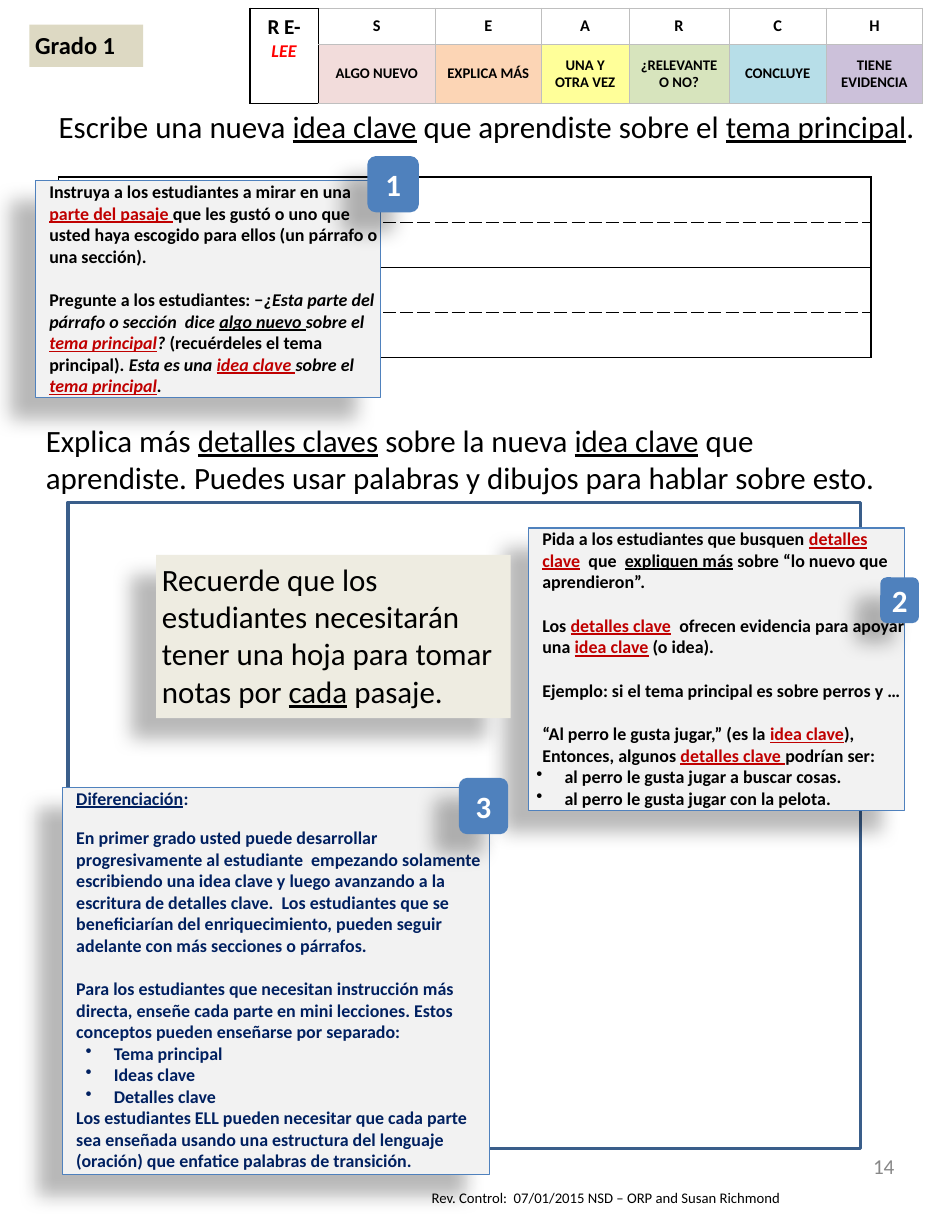
from dataclasses import dataclass
from itertools import groupby

from lxml import etree
from pptx import Presentation
from pptx.dml.color import RGBColor
from pptx.enum.shapes import MSO_SHAPE as Preset
from pptx.enum.text import MSO_ANCHOR as Anchor, PP_ALIGN as Align
from pptx.oxml.ns import qn
from pptx.util import Inches, Pt

BLACK = RGBColor(0x00, 0x00, 0x00)
WHITE = RGBColor(0xFF, 0xFF, 0xFF)
RED = RGBColor(0xFF, 0x00, 0x00)
KEYWORD = RGBColor(0xC0, 0x00, 0x00)
NAVY = RGBColor(0x00, 0x20, 0x60)
BLUE = RGBColor(0x4F, 0x81, 0xBD)
FRAME = RGBColor(0x3A, 0x5E, 0x8A)
NOTE = RGBColor(0xF2, 0xF2, 0xF2)
TAN = RGBColor(0xDD, 0xD9, 0xC3)
CREAM = RGBColor(0xEE, 0xEC, 0xE1)
GRAY = RGBColor(0x88, 0x88, 0x88)
GRID = RGBColor(0xBF, 0xBF, 0xBF)
PINK = RGBColor(0xF2, 0xDC, 0xDB)
ORANGE = RGBColor(0xFC, 0xD5, 0xB5)
YELLOW = RGBColor(0xFF, 0xFF, 0x99)
GREEN = RGBColor(0xD7, 0xE4, 0xBD)
AQUA = RGBColor(0xB7, 0xDE, 0xE8)
PURPLE = RGBColor(0xCC, 0xC1, 0xDA)

# Inline marks: _underlined_, *underlined keyword*, ~italic~
MARKS = "_*~"


@dataclass
class Para:
    text: str
    before: float = 0
    indent: float = 0
    bullet: bool = False


@dataclass
class Sheet:
    slide: object
    font: str = "Calibri"

    def settle(self, holder, anchor=Anchor.TOP, inset=(0.05, 0.05)):
        holder.vertical_anchor = anchor
        holder.margin_left = holder.margin_right = Inches(inset[0])
        holder.margin_top = holder.margin_bottom = Inches(inset[1])

    def fill_text(self, frame, paras, size, color=BLACK, bold=False, align=Align.LEFT,
                  anchor=Anchor.TOP, inset=(0.05, 0.05), wrap=True):
        frame.word_wrap = wrap
        self.settle(frame, anchor, inset)
        for index, para in enumerate(paras):
            p = frame.add_paragraph() if index else frame.paragraphs[0]
            self.paragraph(p, para, size, color, bold, align)

    def paragraph(self, p, para, size, color, bold=False, align=Align.LEFT):
        p.alignment = align
        p.space_before = Pt(para.before)
        p.font.name, p.font.size, p.font.bold = self.font, Pt(size), bold
        p.font.color.rgb = color
        props = p._p.get_or_add_pPr()
        props.set("marL", str(Inches(para.indent)))
        if para.bullet:
            props.set("indent", str(Inches(-0.24)))
            mark = etree.Element(qn("a:buChar"), char="•")
            props.find(qn("a:defRPr")).addprevious(mark)
        active = set()
        for is_mark, chars in groupby(para.text, lambda char: char in MARKS):
            if is_mark:
                active ^= set(chars)
                continue
            run = p.add_run()
            run.text = "".join(chars)
            if active & {"_", "*"}:
                run.font.underline = True
            if "*" in active:
                run.font.color.rgb = KEYWORD
            if "~" in active:
                run.font.italic = True

    def text(self, box, text, size, parent=None, **style):
        shapes = (parent or self.slide).shapes
        frame = shapes.add_textbox(*map(Inches, box)).text_frame
        self.fill_text(frame, [Para(text)], size, **style)

    def shape(self, box, fill=None, line=None, width=0.75, shadow=False,
              preset=Preset.RECTANGLE, parent=None):
        shape = (parent or self.slide).shapes.add_shape(preset, *map(Inches, box))
        if fill is None:
            shape.fill.background()
        else:
            shape.fill.solid()
            shape.fill.fore_color.rgb = fill
        if line is None:
            shape.line.fill.background()
        else:
            shape.line.color.rgb = line
            shape.line.width = Pt(width)
        shape.shadow.inherit = False
        if shadow:
            effects = shape._element.spPr.find(qn("a:effectLst"))
            outer = etree.SubElement(effects, qn("a:outerShdw"), blurRad=str(Pt(12)),
                                     dist=str(Pt(19.7)), dir=str(141 * 60000),
                                     algn="ctr", rotWithShape="0")
            tint = etree.SubElement(outer, qn("a:srgbClr"), val=str(BLACK))
            etree.SubElement(tint, qn("a:alpha"), val="28000")
        return shape

    def note(self, box, paras, color=BLACK):
        for para in paras:
            para.indent = para.indent or 0.12
        shape = self.shape(box, NOTE, BLUE, shadow=True)
        self.fill_text(shape.text_frame, paras, 11, color, bold=True, inset=(0, 0))

    def badge(self, box, number):
        group = self.slide.shapes.add_group_shape()
        self.shape(box, BLUE, shadow=True, preset=Preset.ROUNDED_RECTANGLE, parent=group)
        left, top, width, height = box
        inner = (left + 0.02, top + 0.07, width - 0.04, height - 0.14)
        self.text(inner, number, 19, group, color=WHITE, bold=True,
                  align=Align.CENTER, anchor=Anchor.MIDDLE, inset=(0, 0))

    def table(self, left, top, widths, heights):
        table = self.slide.shapes.add_table(
            len(heights), len(widths), Inches(left), Inches(top),
            Inches(sum(widths)), Inches(sum(heights))).table
        table.first_row = table.horz_banding = False
        for column, width in zip(table.columns, widths):
            column.width = Inches(width)
        for row, height in zip(table.rows, heights):
            row.height = Inches(height)
        return table

    def cell(self, cell, fill, color, width, dashed=""):
        cell.fill.solid()
        cell.fill.fore_color.rgb = fill
        props = cell._tc.get_or_add_tcPr()
        for index, side in enumerate("LRTB"):
            edge = etree.Element(qn(f"a:ln{side}"), w=str(Pt(width)))
            solid = etree.SubElement(edge, qn("a:solidFill"))
            etree.SubElement(solid, qn("a:srgbClr"), val=str(color))
            etree.SubElement(edge, qn("a:prstDash"),
                             val="sysDash" if side in dashed else "solid")
            props.insert(index, edge)

    def cell_text(self, cell, lines, anchor=Anchor.MIDDLE):
        self.settle(cell, anchor)
        frame = cell.text_frame
        for index, (text, size, color) in enumerate(lines):
            p = frame.add_paragraph() if index else frame.paragraphs[0]
            self.paragraph(p, Para(text), size, color, bold=True, align=Align.CENTER)


def main():
    prs = Presentation()
    prs.slide_width, prs.slide_height = Inches(8), Inches(10.5)
    sheet = Sheet(prs.slides.add_slide(prs.slide_layouts[6]))

    # Footer and page number
    sheet.text((3.58, 10.08, 4, 0.25),
               "Rev. Control:  07/01/2015 NSD – ORP and Susan Richmond", 9, inset=(0.1, 0.05))
    sheet.text((6.75, 9.79, 0.87, 0.3), "14", 13, color=GRAY,
               align=Align.RIGHT, anchor=Anchor.MIDDLE, inset=(0, 0))

    # First task with its writing lines
    sheet.text((0.45, 0.87, 7.46, 0.42),
               "Escribe una nueva _idea clave_ que aprendiste sobre el _tema principal_.",
               19, wrap=False)
    writing = sheet.table(0.5, 1.51, [6.92], [1.54 / 4] * 4)
    for index, line in enumerate(writing.iter_cells()):
        sheet.cell(line, WHITE, BLACK, 1, dashed="T" if index % 2 else "B")
        line.margin_top = line.margin_bottom = 0

    # Drawing area
    sheet.shape((0.58, 4.28, 6.75, 5.51), line=FRAME, width=2)

    # Teacher notes 1 and 2
    sheet.note((0.3, 1.54, 2.94, 1.85), [
        Para("Instruya a los estudiantes a mirar en una *parte del pasaje *que les gustó "
             "o uno que usted haya escogido para ellos (un párrafo o una sección)."),
        Para("Pregunte a los estudiantes: −~¿Esta parte del párrafo o sección  dice "
             "_algo nuevo _sobre el *tema principal*? ~(recuérdeles el tema principal). "
             "~Esta es una *idea clave *sobre el *tema principal*.~", before=13.4),
    ])
    sheet.note((4.5, 4.5, 3.21, 2.41), [
        Para("Pida a los estudiantes que busquen *detalles clave*  que  _expliquen más_ "
             "sobre “lo nuevo que aprendieron”."),
        Para("Los *detalles clave*  ofrecen evidencia para apoyar una *idea clave* "
             "(o idea).", before=13.4),
        Para("Ejemplo: si el tema principal es sobre perros y …", before=13.4),
        Para("“Al perro le gusta jugar,” (es la *idea clave*),", before=13.4),
        Para("Entonces, algunos *detalles clave *podrían ser:"),
        Para("al perro le gusta jugar a buscar cosas.", indent=0.31, bullet=True),
        Para("al perro le gusta jugar con la pelota.", indent=0.31, bullet=True),
    ])
    sheet.badge((3.13, 1.33, 0.44, 0.48), "1")
    sheet.badge((7.5, 4.92, 0.33, 0.39), "2")

    # Grade label
    grade = sheet.shape((0.25, 0.21, 0.97, 0.36), TAN)
    sheet.fill_text(grade.text_frame, [Para("Grado 1")], 15, bold=True)

    # Second task
    sheet.text((0.34, 3.54, 7.32, 0.75),
               "Explica más _detalles claves_ sobre la nueva _idea clave_ que aprendiste. "
               "Puedes usar palabras y dibujos para hablar sobre esto.", 19)

    # Teacher note 3
    concepts = ["Tema principal", "Ideas clave", "Detalles clave"]
    sheet.note((0.53, 6.71, 3.64, 3.3), [
        Para("_Diferenciación_:"),
        Para("En primer grado usted puede desarrollar progresivamente al estudiante  "
             "empezando solamente escribiendo una idea clave y luego avanzando a la "
             "escritura de detalles clave.  Los estudiantes que se beneficiarían del "
             "enriquecimiento, pueden seguir adelante con más secciones o párrafos.",
             before=11),
        Para("Para los estudiantes que necesitan instrucción más directa, enseñe cada "
             "parte en mini lecciones. Estos conceptos pueden enseñarse por separado:",
             before=13.4),
        *[Para(concept, indent=0.44, bullet=True) for concept in concepts],
        Para("Los estudiantes ELL pueden necesitar que cada parte sea enseñada usando una "
             "estructura del lenguaje (oración) que enfatice palabras de transición."),
    ], NAVY)
    sheet.badge((3.91, 6.63, 0.42, 0.48), "3")

    # Reminder
    reminder = sheet.shape((1.33, 4.73, 3.02, 1.39), CREAM, shadow=True)
    sheet.fill_text(reminder.text_frame, [Para(
        "Recuerde que los estudiantes necesitarán tener una hoja para tomar notas por "
        "_cada_ pasaje.")], 19)

    # Strategy table
    steps = [("S", "ALGO NUEVO", PINK), ("E", "EXPLICA MÁS", ORANGE),
             ("A", "UNA Y OTRA VEZ", YELLOW), ("R", "¿RELEVANTE O NO?", GREEN),
             ("C", "CONCLUYE", AQUA), ("H", "TIENE EVIDENCIA", PURPLE)]
    strategy = sheet.table(2.13, 0.07, [0.58, 1, 0.9, 0.75, 0.85, 0.83, 0.82], [0.31, 0.47])
    for col, (letter, action, tint) in enumerate(steps, 1):
        for row, (label, size, fill) in enumerate([(letter, 10, WHITE), (action, 9, tint)]):
            step = strategy.cell(row, col)
            sheet.cell(step, fill, GRID, 0.5)
            sheet.cell_text(step, [(label, size, BLACK)])
    reread = strategy.cell(0, 0)
    reread.merge(strategy.cell(1, 0))
    for row in range(2):
        sheet.cell(strategy.cell(row, 0), WHITE, BLACK, 0.75)
    sheet.cell_text(reread, [("R E-", 13, BLACK), ("~LEE~", 11, RED)], Anchor.TOP)

    prs.save("out.pptx")


if __name__ == "__main__":
    main()
